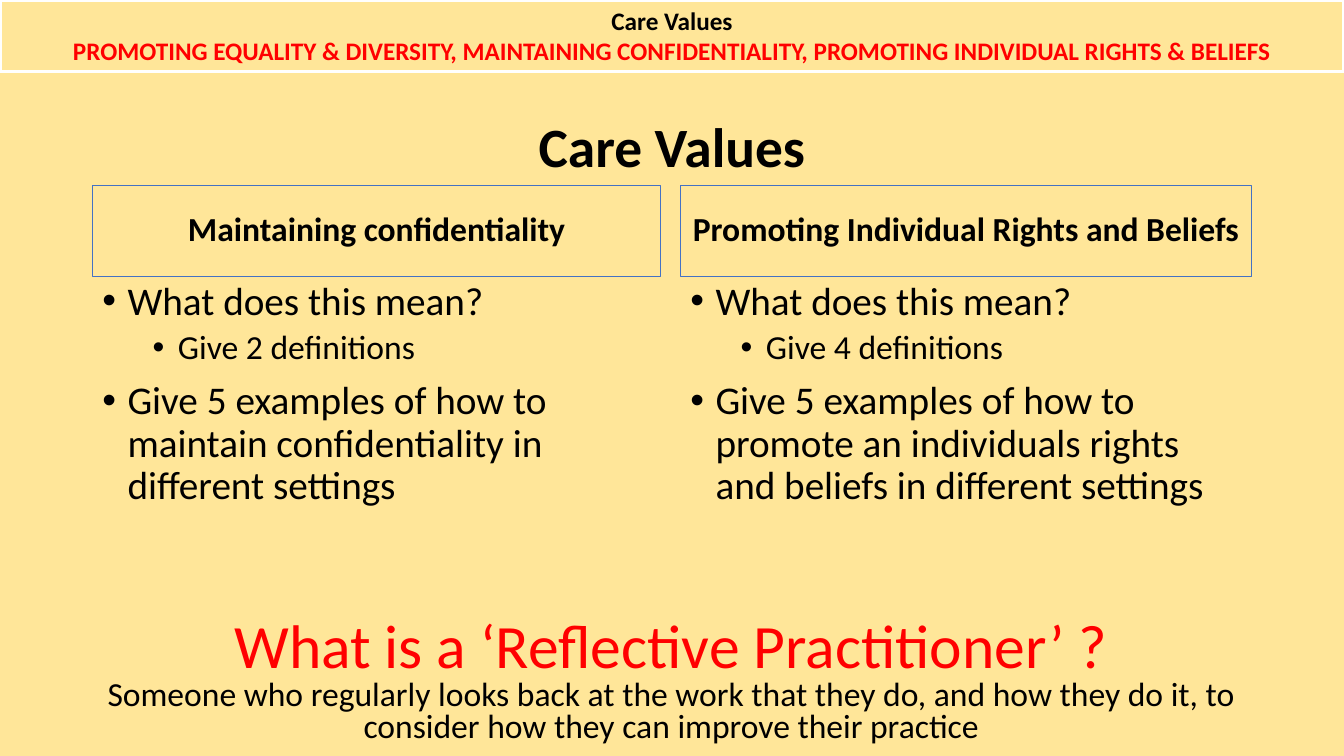
from pptx import Presentation
from pptx.dml.color import RGBColor
from pptx.enum.shapes import MSO_SHAPE
from pptx.enum.text import MSO_ANCHOR, MSO_AUTO_SIZE, PP_ALIGN
from pptx.oxml.xmlchemy import OxmlElement
from pptx.util import Pt

CREAM = RGBColor(0xFF, 0xE6, 0x99)
BLACK = RGBColor(0x00, 0x00, 0x00)
RED = RGBColor(0xFF, 0x00, 0x00)
BLUE = RGBColor(0x44, 0x72, 0xC4)
WHITE = RGBColor(0xFF, 0xFF, 0xFF)
FONT = "Calibri"


def write(frame, lines, anchor=MSO_ANCHOR.MIDDLE, align=PP_ALIGN.CENTER,
          spacing=0.9, bold=False):
    """Fill a frame with lines given as (text, size, colour)."""
    frame.word_wrap = True
    frame.auto_size = MSO_AUTO_SIZE.NONE
    frame.vertical_anchor = anchor
    frame.text = "\n".join(text for text, _, _ in lines)
    for para, (_, size, color) in zip(frame.paragraphs, lines):
        para.alignment = align
        para.line_spacing = spacing
        para.space_before = Pt(0)
        for run in para.runs:
            font = run.font
            font.name, font.size, font.bold = FONT, Pt(size), bold
            font.color.rgb = color


def add_bullet(para, level):
    para.level = level
    para.space_before = Pt(5 if level else 10)
    props = para._p.get_or_add_pPr()
    props.set("marL", str(Pt(54 if level else 18)))
    props.set("indent", str(Pt(-18)))
    face = OxmlElement("a:buFont")
    face.set("typeface", "Arial")
    mark = OxmlElement("a:buChar")
    mark.set("char", "•")
    props.extend([face, mark])


def add_frame(slide, box, color, width):
    """Add an outlined, unfilled rectangle and return its text frame."""
    shape = slide.shapes.add_shape(MSO_SHAPE.RECTANGLE, *map(Pt, box))
    shape.shadow.inherit = False
    shape.fill.background()
    shape.line.color.rgb = color
    shape.line.width = Pt(width)
    return shape.text_frame


def add_text(slide, box):
    return slide.shapes.add_textbox(*map(Pt, box)).text_frame


def add_title(slide, box, text):
    title = slide.shapes.title
    title.left, title.top, title.width, title.height = map(Pt, box)
    write(title.text_frame, [(text, 39.6, BLACK)], bold=True)


def add_column(slide, box, heading, points):
    """Place a framed heading with bullets, given as (level, text), below it."""
    left, top, width, height = box
    head = 65
    frame = add_frame(slide, (left, top, width, head), BLUE, 0.75)
    write(frame, [(heading, 24, BLACK)], bold=True)
    body = add_text(slide, (left, top + head, width, height - head))
    lines = [(text, 24 if level else 28, BLACK) for level, text in points]
    write(body, lines, MSO_ANCHOR.TOP, PP_ALIGN.LEFT)
    for para, (level, _) in zip(body.paragraphs, points):
        add_bullet(para, level)


def add_banner(slide, box, heading, values):
    frame = add_frame(slide, box, WHITE, 2.25)
    write(frame, [(heading, 18, BLACK), (values, 18, RED)],
          MSO_ANCHOR.TOP, spacing=1.0, bold=True)


def add_footer(slide, box, question, answer):
    write(add_text(slide, box), [(question, 44, RED), (answer, 24, BLACK)],
          spacing=0.8)


def main():
    deck = Presentation()
    deck.slide_width, deck.slide_height = Pt(960), Pt(540)
    slide = deck.slides.add_slide(deck.slide_layouts[5])
    slide.background.fill.solid()
    slide.background.fill.fore_color.rgb = CREAM

    add_title(slide, (66, 80, 828, 53), "Care Values")
    add_column(slide, (66, 132.5, 406, 259), "Maintaining confidentiality", [
        (0, "What does this mean?"),
        (1, "Give 2 definitions"),
        (0, "Give 5 examples of how to maintain confidentiality "
            "in different settings"),
    ])
    add_column(slide, (486, 132.5, 408, 275),
               "Promoting Individual Rights and Beliefs", [
        (0, "What does this mean?"),
        (1, "Give 4 definitions"),
        (0, "Give 5 examples of how to promote an individuals rights "
            "and beliefs in different settings"),
    ])
    add_footer(slide, (65.5, 435.6, 828, 104.4),
               "What is a ‘Reflective Practitioner’ ?",
               "Someone who regularly looks back at the work that they do, "
               "and how they do it, to consider how they can improve "
               "their practice")
    add_banner(slide, (0, 0, 960, 51), "Care Values",
               "PROMOTING EQUALITY & DIVERSITY, MAINTAINING CONFIDENTIALITY, "
               "PROMOTING INDIVIDUAL RIGHTS & BELIEFS")
    deck.save("out.pptx")


if __name__ == "__main__":
    main()
